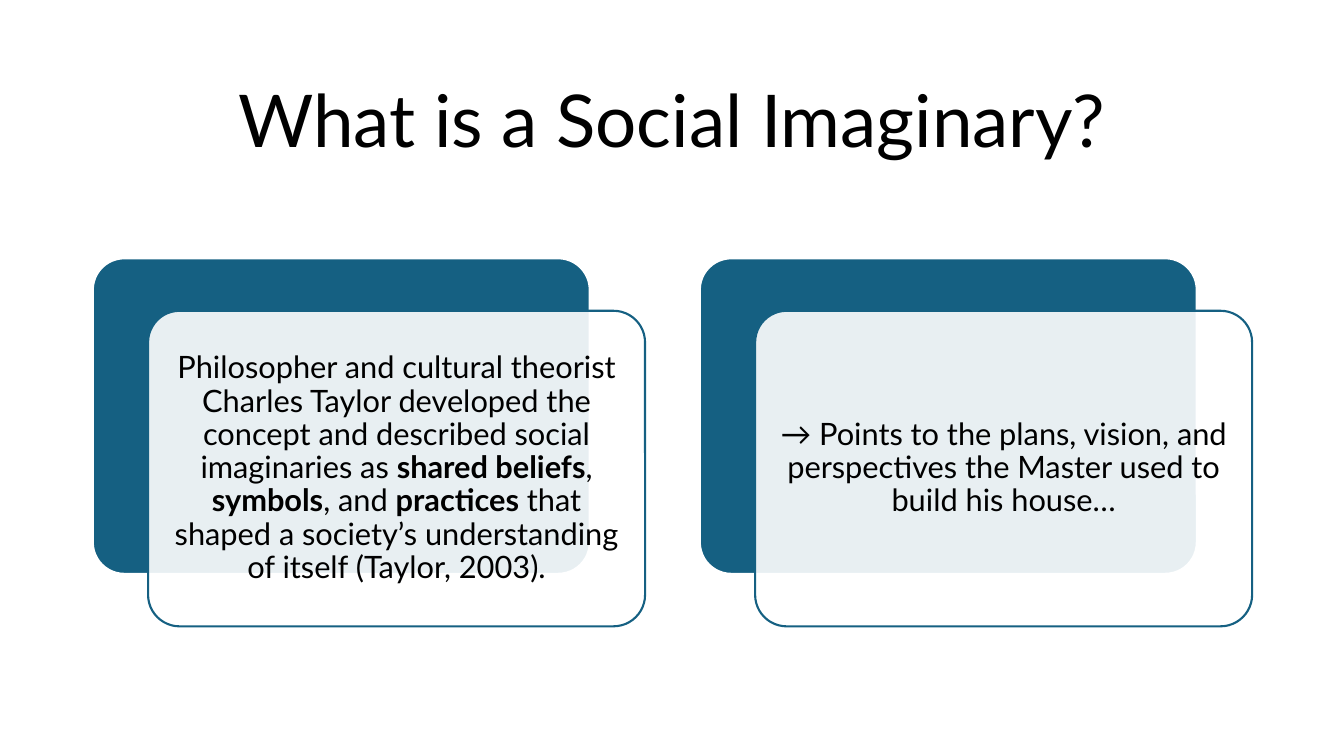
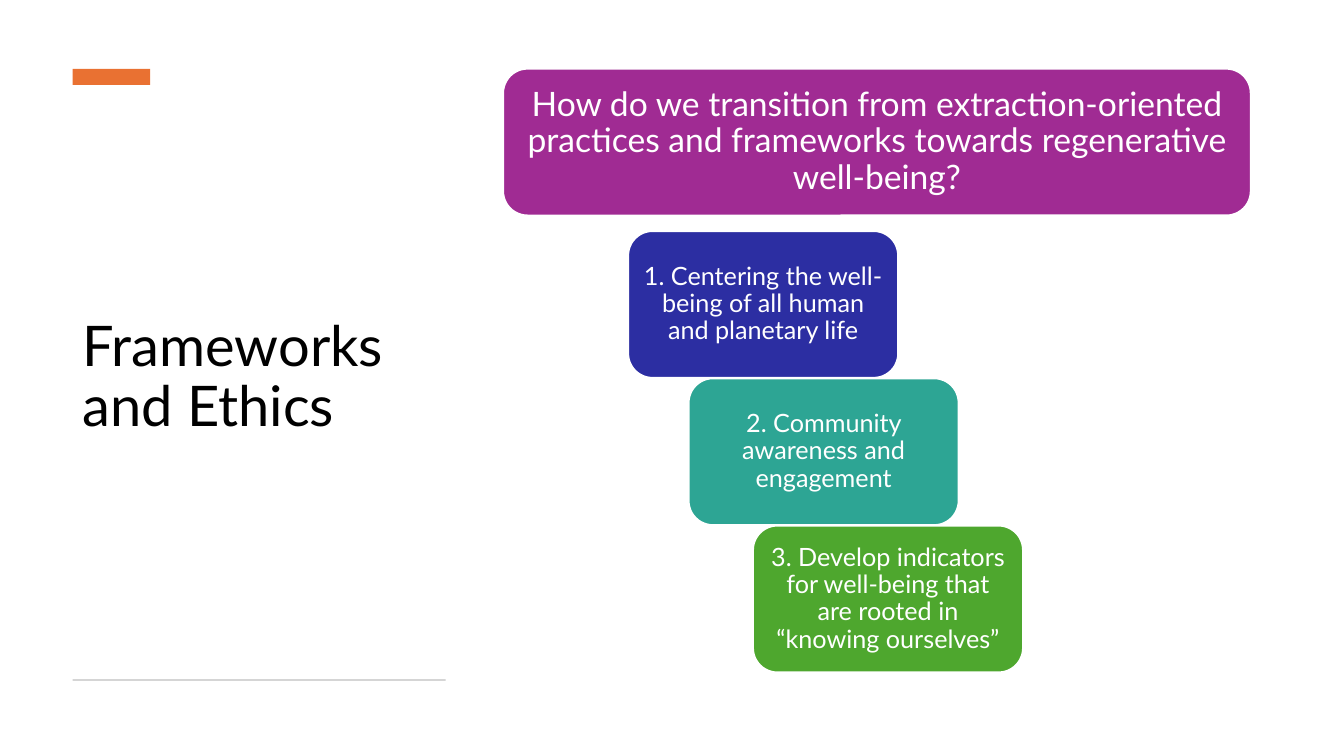
"""Build two slides on social imaginaries and on frameworks and ethics."""
from dataclasses import dataclass
from typing import NamedTuple, Optional

import lxml.etree
import pptx
import pptx.dml.color
import pptx.enum.shapes
import pptx.enum.text
import pptx.oxml.ns
import pptx.shapes.autoshape
import pptx.slide
import pptx.text.text
import pptx.util

Pt = pptx.util.Pt
Kind = pptx.enum.shapes.MSO_SHAPE
Align = pptx.enum.text.PP_ALIGN
Shape = pptx.shapes.autoshape.Shape
Slide = pptx.slide.Slide


@dataclass(frozen=True)
class Theme:
    font: str = "Lato"
    black: str = "000000"
    white: str = "FFFFFF"
    blue: str = "156082"
    orange: str = "E97132"
    grey: str = "D5D5D5"
    purple: str = "A02B93"
    indigo: str = "2C2EA2"
    teal: str = "2DA594"
    green: str = "4EA72E"
    wide_title: float = 52
    side_title: float = 40
    question: float = 24
    body: float = 22
    step: float = 18
    line_spacing: float = 0.9
    outline: float = 1.5


THEME = Theme()


class Box(NamedTuple):
    left: float
    top: float
    width: float
    height: float

    def shifted(self, across: float, down: float) -> "Box":
        return self._replace(left=self.left + across, top=self.top + down)

    def points(self) -> list[pptx.util.Length]:
        return [Pt(value) for value in self]


class Span(NamedTuple):
    text: str
    bold: bool = False


class TextStyle(NamedTuple):
    size: float
    colour: str
    align: Align = Align.CENTER
    inset_across: float = 7.2
    inset_down: float = 3.6


class Step(NamedTuple):
    text: str
    left: float
    colour: str


DEFINITION = [
    Span("Philosopher and cultural theorist Charles Taylor developed the concept "
         "and described social imaginaries as "),
    Span("shared beliefs", True),
    Span(", "),
    Span("symbols", True),
    Span(", and "),
    Span("practices", True),
    Span(" that shaped a society’s understanding of itself (Taylor, 2003)."),
]
PLANS = [Span("→ Points to the plans, vision, and perspectives the Master used to build his house…")]
QUESTION = [Span("How do we transition from extraction-oriented practices and frameworks "
                 "towards regenerative well-being?")]
STEPS = [
    Step("1. Centering the well-being of all human and planetary life", 448.6, THEME.indigo),
    Step("2. Community awareness and engagement", 491.8, THEME.teal),
    Step("3. Develop indicators for well-being that are rooted in “knowing ourselves”",
         537.8, THEME.green),
]


def rgb(colour: str) -> pptx.dml.color.RGBColor:
    return pptx.dml.color.RGBColor.from_string(colour)


def write_text(frame: pptx.text.text.TextFrame, spans: list[Span], style: TextStyle) -> None:
    frame.word_wrap = True
    frame.vertical_anchor = pptx.enum.text.MSO_ANCHOR.MIDDLE
    frame.margin_left = frame.margin_right = Pt(style.inset_across)
    frame.margin_top = frame.margin_bottom = Pt(style.inset_down)
    para = frame.paragraphs[0]
    para.alignment = style.align
    para.line_spacing = THEME.line_spacing
    for text, bold in spans:
        span = para.add_run()
        span.text = text
        span.font.name = THEME.font
        span.font.size = Pt(style.size)
        span.font.bold = bold
        span.font.color.rgb = rgb(style.colour)


def add_title(page: Slide, text: str, box: Box, size: float, align: Align) -> None:
    title = page.shapes.add_textbox(*box.points())
    write_text(title.text_frame, [Span(text)], TextStyle(size, THEME.black, align))


def add_block(page: Slide, kind: Kind, box: Box, fill: str, line: Optional[str] = None) -> Shape:
    block = page.shapes.add_shape(kind, *box.points())
    block.shadow.inherit = False
    block.fill.solid()
    block.fill.fore_color.rgb = rgb(fill)
    if line:
        block.line.color.rgb = rgb(line)
        block.line.width = Pt(THEME.outline)
    else:
        block.line.fill.background()
    return block


def set_opacity(block: Shape, percent: int) -> None:
    qn = pptx.oxml.ns.qn
    colour = block.element.spPr.find(f"{qn('a:solidFill')}/{qn('a:srgbClr')}")
    lxml.etree.SubElement(colour, qn("a:alpha")).set("val", str(percent * 1000))


def add_layered_card(page: Slide, box: Box, spans: list[Span]) -> None:
    back = add_block(page, Kind.ROUNDED_RECTANGLE, box, THEME.blue, THEME.white)
    front = add_block(page, Kind.ROUNDED_RECTANGLE, box.shifted(39.5, 37.5),
                      THEME.white, THEME.blue)
    for card in (back, front):
        card.adjustments[0] = 0.1
    set_opacity(front, 90)
    write_text(front.text_frame, spans, TextStyle(THEME.body, THEME.black, inset_across=6.6, inset_down=6.6))


def build_imaginary_page(page: Slide) -> None:
    add_title(page, "What is a Social Imaginary?", Box(66, 44, 828, 89.3),
              THEME.wide_title, Align.CENTER)
    first_card = Box(66.3, 184.5, 355, 225.4)
    for column, spans in enumerate((DEFINITION, PLANS)):
        add_layered_card(page, first_card.shifted(column * 433.6, 0), spans)


def build_frameworks_page(page: Slide) -> None:
    left, width = 52, 266.4
    add_title(page, "Frameworks and Ethics", Box(left, 75.6, width, 389.5),
              THEME.side_title, Align.LEFT)
    add_block(page, Kind.RECTANGLE, Box(left, 49.2, 55.4, 11.5), THEME.orange)
    add_block(page, Kind.RECTANGLE, Box(left, 485, width, 1.4), THEME.grey)

    height = 105
    question = add_block(page, Kind.ROUNDED_RECTANGLE, Box(359.3, 49, 534.2, height),
                         THEME.purple, THEME.white)
    write_text(question.text_frame, QUESTION, TextStyle(THEME.question, THEME.white))
    step_style = TextStyle(THEME.step, THEME.white, inset_across=5.4, inset_down=2.7)
    for row, step in enumerate(STEPS):
        box = Box(step.left, 165 + row * 105.2, 193, height)
        card = add_block(page, Kind.ROUNDED_RECTANGLE, box, step.colour, THEME.white)
        write_text(card.text_frame, [Span(step.text)], step_style)


def main() -> None:
    deck = pptx.Presentation()
    deck.slide_width, deck.slide_height = Pt(960), Pt(540)
    blank = deck.slide_layouts[6]
    for build in (build_imaginary_page, build_frameworks_page):
        build(deck.slides.add_slide(blank))
    deck.save("out.pptx")


if __name__ == "__main__":
    main()
